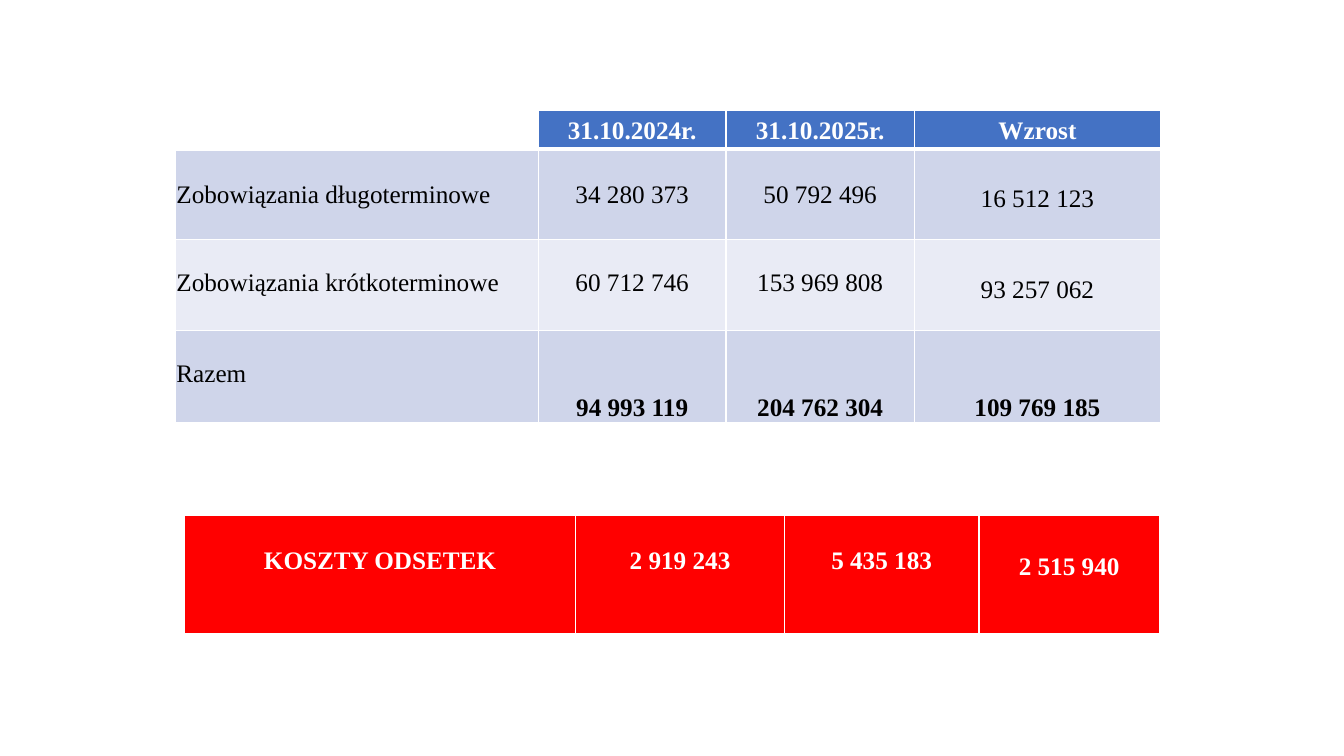
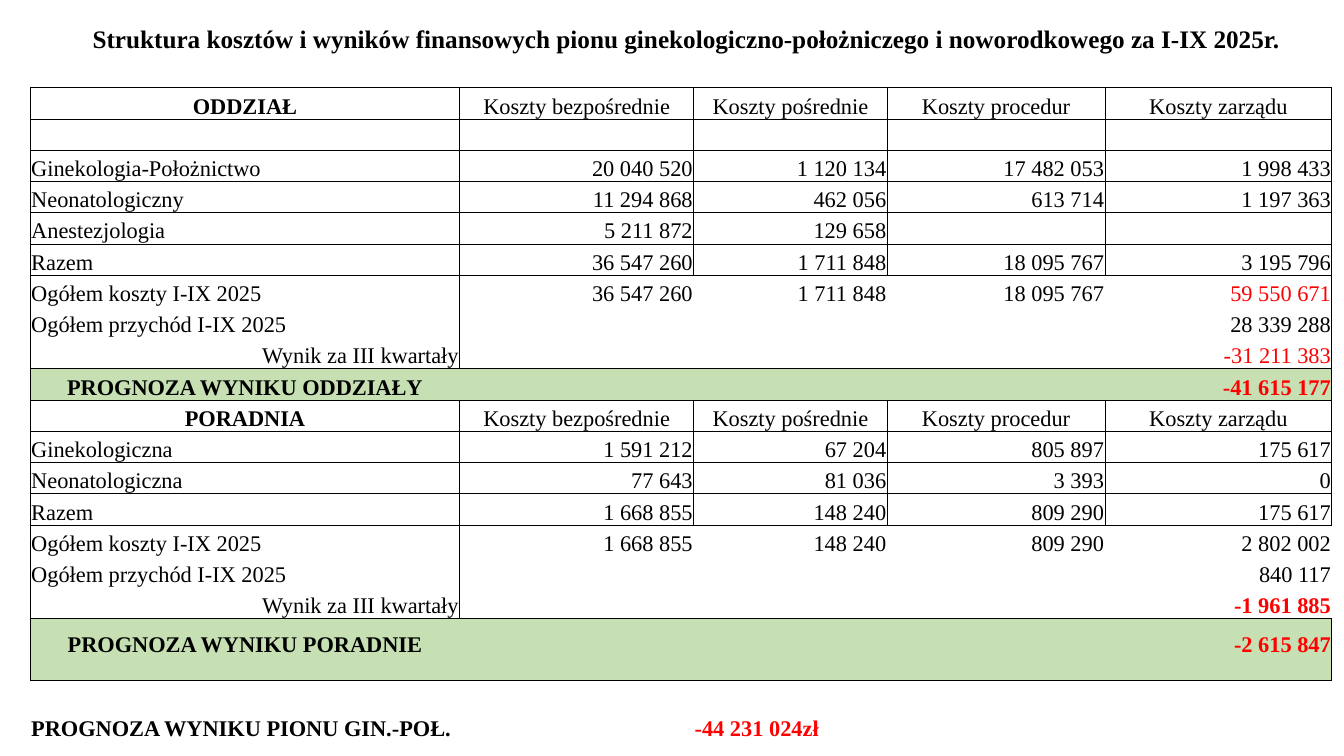
from dataclasses import dataclass, replace

import pptx
import pptx.dml.color
import pptx.enum.text
import pptx.oxml
import pptx.oxml.ns
import pptx.slide
import pptx.table
import pptx.util
from lxml import etree

Inches = pptx.util.Inches
Pt = pptx.util.Pt
Align = pptx.enum.text.PP_ALIGN
Anchor = pptx.enum.text.MSO_ANCHOR
qn = pptx.oxml.ns.qn

PLAIN_TABLE_STYLE = "{2D5ABB26-0587-4C30-8999-92F81FD0307C}"
EDGE_TAGS = {"l": "a:lnL", "r": "a:lnR", "t": "a:lnT", "b": "a:lnB", "B": "a:lnB"}


@dataclass(frozen=True)
class Theme:
    font: str = "Times New Roman"
    large: int = 18
    small: int = 16
    black: str = "000000"
    white: str = "FFFFFF"
    red: str = "FF0000"
    header: str = "4472C4"
    band_dark: str = "CFD5EA"
    band_light: str = "E9EBF5"
    forecast: str = "C6E0B4"
    heavy_line: float = 3


THEME = Theme()


@dataclass(frozen=True)
class Cell:
    text: str = ""
    align: Align = Align.CENTER
    anchor: Anchor = Anchor.BOTTOM
    bold: bool = False
    color: str = THEME.black
    fill: str | None = None
    edges: str = "lrtb"
    above: float = 0.01
    below: float = 0


@dataclass(frozen=True)
class TableStyle:
    size: int
    line_color: str
    line_width: float


@dataclass(frozen=True)
class RowKind:
    first: str
    middle: str
    last: str
    fill: str | None = None
    below: float = 0

    def edges(self, column: int, count: int) -> str:
        return self.first if column == 0 else self.last if column == count - 1 else self.middle


WHITE_GRID = TableStyle(THEME.large, THEME.white, 1)
BLACK_GRID = TableStyle(THEME.small, THEME.black, 0.5)

GRID = RowKind("lrtb", "lrtb", "lrtb")
SPACER = RowKind("lrt", "lrt", "lrt")
BELOW_OPEN = RowKind("lrb", "lrb", "lrb")
WARD_SUM = RowKind("lr", "", "r")
CLINIC_SUM = RowKind("lr", "", "")
WARD_FORECAST = RowKind("lt", "t", "rt", THEME.forecast)
CLINIC_FORECAST = RowKind("ltb", "tb", "rtb", THEME.forecast, 0.23)
OUTSIDE = RowKind("", "", "")


def rgb(color: str) -> pptx.dml.color.RGBColor:
    return pptx.dml.color.RGBColor.from_string(color)


def add_run(paragraph, text: str, size: int, color: str, bold: bool) -> None:
    run = paragraph.add_run()
    run.text = text
    run.font.name = THEME.font
    run.font.size = Pt(size)
    run.font.bold = bold
    run.font.color.rgb = rgb(color)


def add_edge(properties, edge: str, style: TableStyle) -> None:
    width = THEME.heavy_line if edge == "B" else style.line_width
    line = etree.SubElement(properties, qn(EDGE_TAGS[edge]), w=str(int(Pt(width))))
    solid = etree.SubElement(line, qn("a:solidFill"))
    etree.SubElement(solid, qn("a:srgbClr"), val=style.line_color)


def draw_cell(target: pptx.table._Cell, cell: Cell, style: TableStyle) -> None:
    target.margin_left = target.margin_right = Inches(0.01)
    target.margin_top = Inches(cell.above)
    target.margin_bottom = Inches(cell.below)
    target.vertical_anchor = cell.anchor
    properties = target._tc.get_or_add_tcPr()
    for edge in cell.edges:
        add_edge(properties, edge, style)
    if cell.fill:
        target.fill.solid()
        target.fill.fore_color.rgb = rgb(cell.fill)
    else:
        target.fill.background()
    paragraph = target.text_frame.paragraphs[0]
    paragraph.alignment = cell.align
    if cell.text:
        add_run(paragraph, cell.text, style.size, cell.color, cell.bold)
    else:
        etree.SubElement(paragraph._p, qn("a:endParaRPr"), sz=str(style.size * 100))


def draw_table(slide: pptx.slide.Slide, left: float, top: float, widths: list[float],
               heights: list[float], rows: list[list[Cell]], style: TableStyle) -> None:
    frame = slide.shapes.add_table(len(rows), len(widths), Inches(left), Inches(top),
                                   Inches(sum(widths)), Inches(sum(heights)))
    table = frame.table
    table.first_row = table.horz_banding = False
    table._tbl.tblPr.find(qn("a:tableStyleId")).text = PLAIN_TABLE_STYLE
    for column, width in zip(table.columns, widths):
        column.width = Inches(width)
    for row, height in zip(table.rows, heights):
        row.height = Inches(height)
    for r, cells in enumerate(rows):
        for c, cell in enumerate(cells):
            draw_cell(table.cell(r, c), cell, style)


def liability_row(values: list[str], fill: str, label: Cell, amount: Cell, growth: Cell) -> list[Cell]:
    styles = [replace(label, align=Align.LEFT), amount, amount, growth]
    return [replace(style, text=value, fill=fill, edges="lrb") for style, value in zip(styles, values)]


def draw_liabilities(slide: pptx.slide.Slide) -> None:
    heading = Cell(anchor=Anchor.MIDDLE, bold=True, color=THEME.white, fill=THEME.header, edges="lrtB")
    middle = Cell(anchor=Anchor.MIDDLE)
    lowered = Cell(anchor=Anchor.TOP, above=0.29)
    raised = Cell(below=0.27)
    total = Cell(bold=True)
    rows = [
        [Cell(edges="lrtB")] + [replace(heading, text=text)
                                for text in ("31.10.2024r.", "31.10.2025r.", "Wzrost")],
        liability_row(["Zobowiązania długoterminowe", "34 280 373", "50 792 496", "16 512 123"],
                      THEME.band_dark, middle, middle, raised),
        liability_row(["Zobowiązania krótkoterminowe", "60 712 746", "153 969 808", "93 257 062"],
                      THEME.band_light, lowered, lowered, raised),
        liability_row(["Razem", "94 993 119", "204 762 304", "109 769 185"],
                      THEME.band_dark, lowered, total, total),
    ]
    draw_table(slide, 1.74, 1.1, [3.6, 1.86, 1.87, 2.44], [0.38, 0.9, 0.9, 0.91], rows, WHITE_GRID)


def draw_interest(slide: pptx.slide.Slide) -> None:
    amount = Cell(anchor=Anchor.TOP, above=0.32, bold=True, color=THEME.white, fill=THEME.red, edges="lrtB")
    interest = [replace(amount, text=text) for text in ("KOSZTY ODSETEK", "2 919 243", "5 435 183")]
    growth = replace(amount, text="2 515 940", anchor=Anchor.BOTTOM, above=0.01, below=0.54)
    draw_table(slide, 1.83, 5.11, [3.88, 2.07, 1.93, 1.79], [1.19], [interest + [growth]], WHITE_GRID)


def cost_row(kind: RowKind, label: str, values: list[str], align: Align = Align.RIGHT,
             label_align: Align = Align.LEFT, bold_label: bool = False,
             last_color: str = THEME.black, bold_last: bool = False) -> list[Cell]:
    texts = [label] + values
    count = len(texts)
    cells = [Cell(text, align, fill=kind.fill, edges=kind.edges(column, count), below=kind.below)
             for column, text in enumerate(texts)]
    cells[0] = replace(cells[0], align=label_align, bold=bold_label)
    cells[-1] = replace(cells[-1], color=last_color, bold=bold_last)
    return cells


def heading_row(kind: RowKind, unit: str) -> list[Cell]:
    costs = ["Koszty bezpośrednie", "Koszty pośrednie", "Koszty procedur", "Koszty zarządu"]
    return cost_row(kind, unit, costs, Align.CENTER, Align.CENTER, True)


def closing_rows(kind: RowKind, totals: list[str], cost_color: str, income: str, result: str,
                 bold_result: bool, forecast_kind: RowKind, forecast_label: str,
                 forecast: str) -> list[list[Cell]]:
    gap = [""] * 3
    return [
        cost_row(kind, "Ogółem koszty I-IX 2025", totals, last_color=cost_color),
        cost_row(kind, "Ogółem przychód I-IX 2025", gap + [income]),
        cost_row(kind, "Wynik za III kwartały", gap + [result], label_align=Align.RIGHT,
                 last_color=THEME.red, bold_last=bold_result),
        cost_row(forecast_kind, forecast_label, gap + [forecast], label_align=Align.CENTER,
                 bold_label=True, last_color=THEME.red, bold_last=True),
    ]


def draw_costs(slide: pptx.slide.Slide) -> None:
    ward_total = ["36 547 260", "1 711 848", "18 095 767"]
    clinic_total = ["1 668 855", "148 240", "809 290"]
    overall = cost_row(OUTSIDE, "PROGNOZA WYNIKU PIONU GIN.-POŁ.", [""] * 4, bold_label=True)
    overall[2] = replace(overall[2], text="-44 231 024zł", align=Align.LEFT, color=THEME.red, bold=True)
    rows = [
        heading_row(GRID, "ODDZIAŁ"),
        cost_row(SPACER, "", [""] * 4),
        cost_row(BELOW_OPEN, "Ginekologia-Położnictwo", ["20 040 520", "1 120 134", "17 482 053", "1 998 433"]),
        cost_row(GRID, "Neonatologiczny", ["11 294 868", "462 056", "613 714", "1 197 363"]),
        cost_row(GRID, "Anestezjologia", ["5 211 872", "129 658", "", ""]),
        cost_row(GRID, "Razem", ward_total + ["3 195 796"]),
        *closing_rows(WARD_SUM, ward_total + ["59 550 671"], THEME.red, "28 339 288", "-31 211 383",
                      False, WARD_FORECAST, "PROGNOZA WYNIKU ODDZIAŁY", "-41 615 177"),
        heading_row(BELOW_OPEN, "PORADNIA"),
        cost_row(GRID, "Ginekologiczna", ["1 591 212", "67 204", "805 897", "175 617"]),
        cost_row(GRID, "Neonatologiczna", ["77 643", "81 036", "3 393", "0"]),
        cost_row(GRID, "Razem", clinic_total + ["175 617"]),
        *closing_rows(CLINIC_SUM, clinic_total + ["2 802 002"], THEME.black, "840 117", "-1 961 885",
                      True, CLINIC_FORECAST, "PROGNOZA WYNIKU PORADNIE", "-2 615 847"),
        overall,
    ]
    heights = [0.31] * (len(rows) - 2) + [0.61] * 2
    draw_table(slide, 0.3, 0.87, [4.26, 2.32, 1.92, 2.16, 2.25], heights, rows, BLACK_GRID)


def draw_title(slide: pptx.slide.Slide, text: str) -> None:
    title = slide.shapes.add_textbox(Inches(0.82), Inches(0.18), Inches(12.1), Inches(0.4))
    title.text_frame.word_wrap = False
    title.text_frame.auto_size = pptx.enum.text.MSO_AUTO_SIZE.SHAPE_TO_FIT_TEXT
    add_run(title.text_frame.paragraphs[0], text, THEME.large, THEME.black, True)


def main() -> None:
    deck = pptx.Presentation()
    deck.slide_width = Inches(13.33)
    deck.slide_height = Inches(7.5)
    blank = deck.slide_layouts[6]

    liabilities = deck.slides.add_slide(blank)
    draw_liabilities(liabilities)
    draw_interest(liabilities)

    costs = deck.slides.add_slide(blank)
    draw_costs(costs)
    draw_title(costs, "Struktura kosztów i wyników finansowych pionu "
                      "ginekologiczno-położniczego i noworodkowego za I-IX 2025r.")
    deck.save("out.pptx")


if __name__ == "__main__":
    main()
